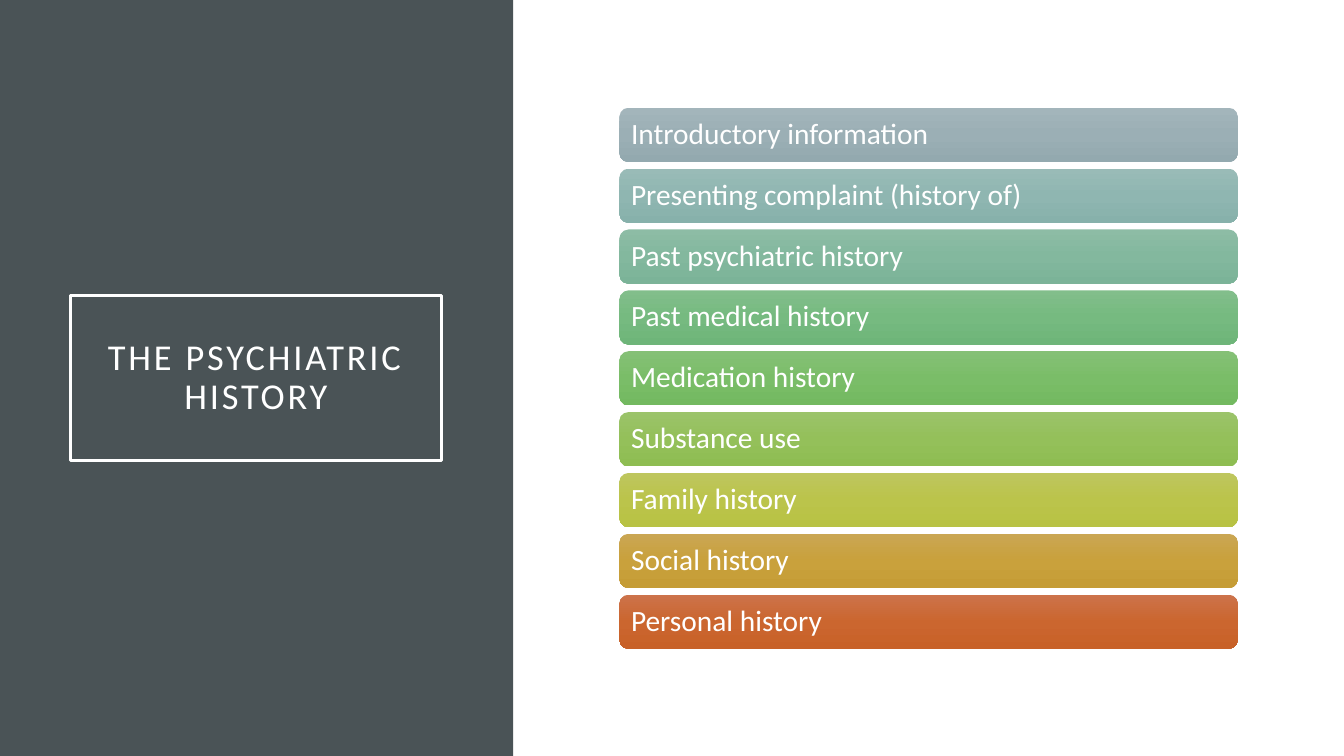
from copy import deepcopy
from dataclasses import dataclass

from pptx import Presentation
from pptx.dml.color import RGBColor
from pptx.enum.shapes import MSO_SHAPE
from pptx.enum.text import MSO_ANCHOR, PP_ALIGN
from pptx.shapes.autoshape import Shape
from pptx.slide import Slide
from pptx.util import Pt


@dataclass(frozen=True)
class Theme:
    font: str = "Calibri"
    panel: str = "4A5356"
    white: str = "FFFFFF"
    title: float = 26
    body: float = 21


@dataclass(frozen=True)
class Box:
    left: float
    top: float
    width: float
    height: float


@dataclass(frozen=True)
class Topic:
    label: str
    shades: tuple[str, str, str]


THEME = Theme()
PANEL = Box(0, 0, 366.5, 540)
FRAME = Box(50.4, 211, 265, 118)
FIRST = Box(442.5, 77, 441.7, 38.7)
PITCH = 43.47

TOPICS = [
    Topic("Introductory information", ("A3B5BB", "9BAFB5", "93A9AF")),
    Topic("Presenting complaint (history of)", ("99BBB7", "8FB6B1", "87B1AB")),
    Topic("Past psychiatric history", ("8DBCA5", "83B89E", "7BB398")),
    Topic("Past medical history", ("82BE8B", "76BA80", "6EB579")),
    Topic("Medication history", ("85C076", "7ABD68", "73B960")),
    Topic("Substance use", ("9BC36A", "94C05A", "8EBD52")),
    Topic("Family history", ("BEC65E", "BBC44B", "B8C243")),
    Topic("Social history", ("CAA653", "C9A13C", "C59C35")),
    Topic("Personal history", ("CC734B", "CB662F", "C86128")),
]


def add_box(slide: Slide, kind: MSO_SHAPE, box: Box) -> Shape:
    """Add a preset shape with no fill, line or shadow."""
    shape = slide.shapes.add_shape(
        kind, Pt(box.left), Pt(box.top), Pt(box.width), Pt(box.height)
    )
    shape.shadow.inherit = False
    shape.fill.background()
    shape.line.fill.background()
    return shape


def shade(shape: Shape, shades: tuple[str, str, str]) -> None:
    """Fill from top to bottom with three evenly spaced colours."""
    fill = shape.fill
    fill.gradient()
    fill.gradient_angle = 270
    stops = shape._element.spPr.gradFill.gsLst
    stops.insert(1, deepcopy(stops[0]))
    for index, (stop, color) in enumerate(zip(fill.gradient_stops, shades)):
        stop.position = index / 2
        stop.color.rgb = RGBColor.from_string(color)


def write(
    shape: Shape,
    text: str,
    *,
    size: float,
    align: PP_ALIGN = PP_ALIGN.LEFT,
    side: float = 0,
    edge: float = 0,
    track: float = 0,
) -> None:
    """Set text; side and edge are insets, track is letter spacing."""
    frame = shape.text_frame
    frame.word_wrap = True
    frame.vertical_anchor = MSO_ANCHOR.MIDDLE
    frame.margin_left = frame.margin_right = Pt(side)
    frame.margin_top = frame.margin_bottom = Pt(edge)
    para = frame.paragraphs[0]
    para.alignment = align
    para.line_spacing = 0.9
    run = para.add_run()
    run.text = text
    run.font.name = THEME.font
    run.font.size = Pt(size)
    run.font.color.rgb = RGBColor.from_string(THEME.white)
    if track:
        run.font._element.set("spc", str(round(track * 100)))


def add_title(slide: Slide) -> None:
    panel = add_box(slide, MSO_SHAPE.RECTANGLE, PANEL)
    panel.fill.solid()
    panel.fill.fore_color.rgb = RGBColor.from_string(THEME.panel)
    frame = add_box(slide, MSO_SHAPE.RECTANGLE, FRAME)
    frame.line.color.rgb = RGBColor.from_string(THEME.white)
    frame.line.width = Pt(2.5)
    write(frame, "THE PSYCHIATRIC HISTORY", size=THEME.title,
          align=PP_ALIGN.CENTER, side=14.4, edge=14.4, track=2)


def add_topic(slide: Slide, topic: Topic, row: int) -> None:
    box = Box(FIRST.left, FIRST.top + row * PITCH, FIRST.width, FIRST.height)
    bar = add_box(slide, MSO_SHAPE.ROUNDED_RECTANGLE, box)
    shade(bar, topic.shades)
    write(bar, topic.label, size=THEME.body, side=6.4)


def main() -> None:
    deck = Presentation()
    deck.slide_width, deck.slide_height = Pt(960), Pt(540)
    slide = deck.slides.add_slide(deck.slide_layouts[6])
    add_title(slide)
    for row, topic in enumerate(TOPICS):
        add_topic(slide, topic, row)
    deck.save("out.pptx")


if __name__ == "__main__":
    main()
